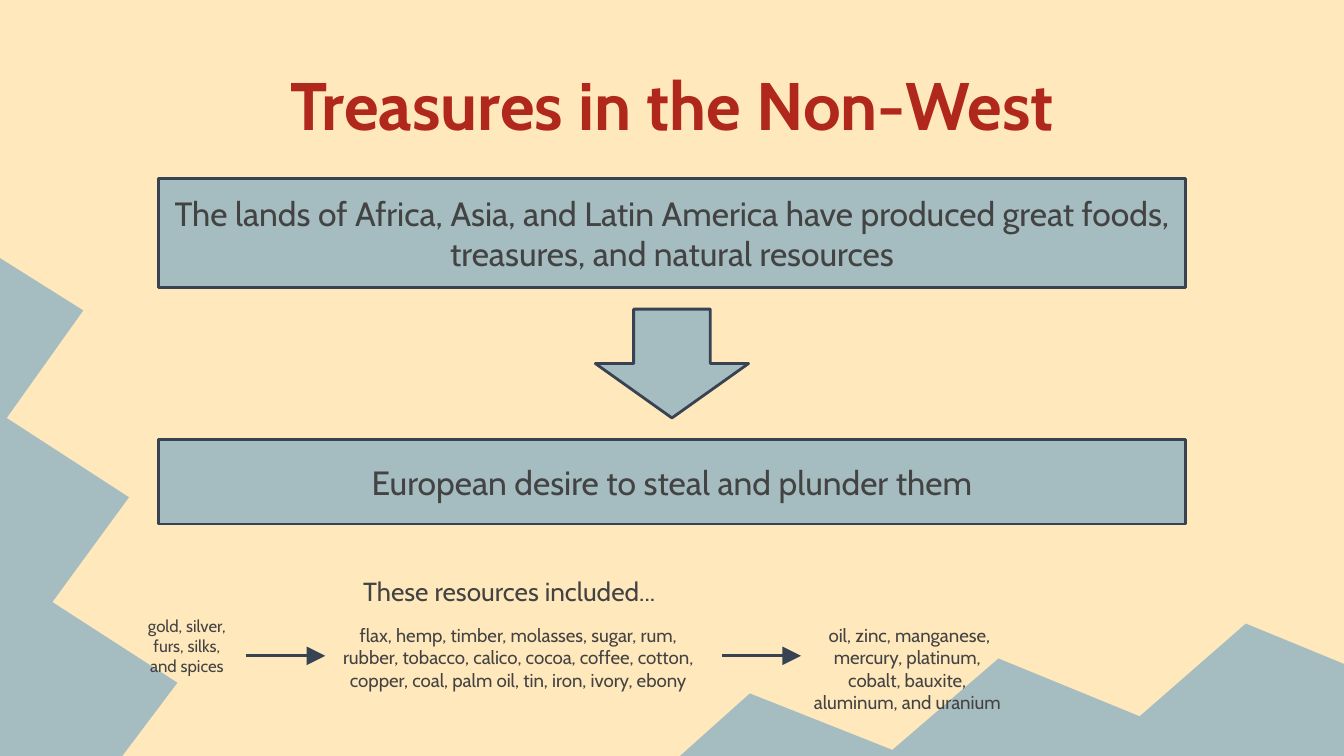
from lxml import etree
from pptx import Presentation
from pptx.dml.color import RGBColor
from pptx.enum import shapes, text
from pptx.oxml.ns import qn
from pptx.util import Inches, Pt

CREAM = RGBColor(0xFF, 0xE8, 0xBB)
TEAL = RGBColor(0xA5, 0xBD, 0xC0)
NAVY = RGBColor(0x37, 0x42, 0x52)
RED = RGBColor(0xB0, 0x27, 0x1C)
GRAY = RGBColor(0x43, 0x43, 0x43)
FONT = "Cabin"
WIDTH = 10
HEIGHT = WIDTH * 9 / 16

TITLE = "Treasures in the Non-West"
MOUNTAINS = [
    [(0, 1.92), (0, HEIGHT), (0.91, HEIGHT), (1.32, 5.08), (0.39, 4.48),
     (0.96, 3.7), (0.05, 3.11), (0.62, 2.31)],
    [(5.06, HEIGHT), (WIDTH, HEIGHT), (WIDTH, 4.94), (9.27, 4.64), (8.48, 5.33),
     (7.43, 4.9), (6.64, 5.58), (5.58, 5.16)],
]
BANNER_WIDTH = 7.64
BLOCK_ARROW_WIDTH = 1.14
BANNERS = [
    ("The lands of Africa, Asia, and Latin America have produced great foods, "
     "treasures, and natural resources", 1.33, 0.81, 0),
    ("European desire to steal and plunder them", 3.27, 0.63, 6),
]
NOTES = [
    ("These resources included...", (1.97, 4.18, 3.64, 0.43), 14),
    ("flax, hemp, timber, molasses, sugar, rum, rubber, tobacco, calico, cocoa, "
     "coffee, cotton, copper, coal, palm oil, tin, iron, ivory, ebony",
     (2.42, 4.54, 2.87, 0.81), 10),
    ("gold, silver, furs, silks, and spices", (0.99, 4.48, 0.8, 0.81), 9),
    (" oil, zinc, manganese, mercury, platinum, cobalt, bauxite, aluminum, and uranium",
     (5.91, 4.54, 1.68, 0.59), 10),
]
ARROW_STARTS = [1.83, 5.37]
ARROW_LENGTH = 0.59
ARROW_Y = 4.88


def write(box, words, size, color=GRAY, anchor=text.MSO_ANCHOR.TOP, bold=False, before=0):
    frame = box.text_frame
    frame.text = words
    frame.word_wrap = True
    frame.auto_size = text.MSO_AUTO_SIZE.NONE
    frame.vertical_anchor = anchor
    frame.margin_left = frame.margin_right = Inches(0.1)
    frame.margin_top = frame.margin_bottom = Inches(0.1)
    para = frame.paragraphs[0]
    para.alignment = text.PP_ALIGN.CENTER
    para.space_before = Pt(before)
    font = para.runs[0].font
    font.name, font.size, font.bold = FONT, Pt(size), bold
    font.color.rgb = color


def paint(shape, outlined=True):
    shape.shadow.inherit = False
    shape.fill.solid()
    shape.fill.fore_color.rgb = TEAL
    if outlined:
        shape.line.color.rgb = NAVY
        shape.line.width = Pt(1.5)
    else:
        shape.line.fill.background()


def add_centered(slide, kind, top, width, height):
    left = (WIDTH - width) / 2
    shape = slide.shapes.add_shape(kind, *map(Inches, (left, top, width, height)))
    paint(shape)
    return shape


def add_mountain(slide, points):
    corners = [(Inches(x), Inches(y)) for x, y in points]
    builder = slide.shapes.build_freeform(*corners[0])
    builder.add_line_segments(corners[1:], close=True)
    paint(builder.convert_to_shape(), outlined=False)


def add_arrow(slide, start):
    ends = (start, ARROW_Y, start + ARROW_LENGTH, ARROW_Y)
    arrow = slide.shapes.add_connector(shapes.MSO_CONNECTOR.STRAIGHT, *map(Inches, ends))
    arrow.line.color.rgb = NAVY
    arrow.line.width = Pt(1.5)
    etree.SubElement(arrow.line._get_or_add_ln(), qn("a:tailEnd"),
                     type="triangle", w="lg", len="lg")
    etree.SubElement(arrow._element.spPr, qn("a:effectLst"))


def main():
    deck = Presentation()
    deck.slide_width, deck.slide_height = Inches(WIDTH), Inches(HEIGHT)
    slide = deck.slides.add_slide(deck.slide_layouts[5])
    slide.background.fill.solid()
    slide.background.fill.fore_color.rgb = CREAM

    for points in MOUNTAINS:
        add_mountain(slide, points)

    title = slide.shapes.title
    title.left, title.top, title.width, title.height = map(Inches, (0.5, 0.23, 9, 0.94))
    write(title, TITLE, 36, RED, text.MSO_ANCHOR.BOTTOM, bold=True)

    for words, top, height, before in BANNERS:
        banner = add_centered(slide, shapes.MSO_SHAPE.RECTANGLE, top, BANNER_WIDTH, height)
        write(banner, words, 18, anchor=text.MSO_ANCHOR.MIDDLE, before=before)
    add_centered(slide, shapes.MSO_SHAPE.DOWN_ARROW, 2.3, BLOCK_ARROW_WIDTH, 0.81)

    for words, place, size in NOTES:
        write(slide.shapes.add_textbox(*map(Inches, place)), words, size)
    for start in ARROW_STARTS:
        add_arrow(slide, start)

    deck.save("out.pptx")


if __name__ == "__main__":
    main()
